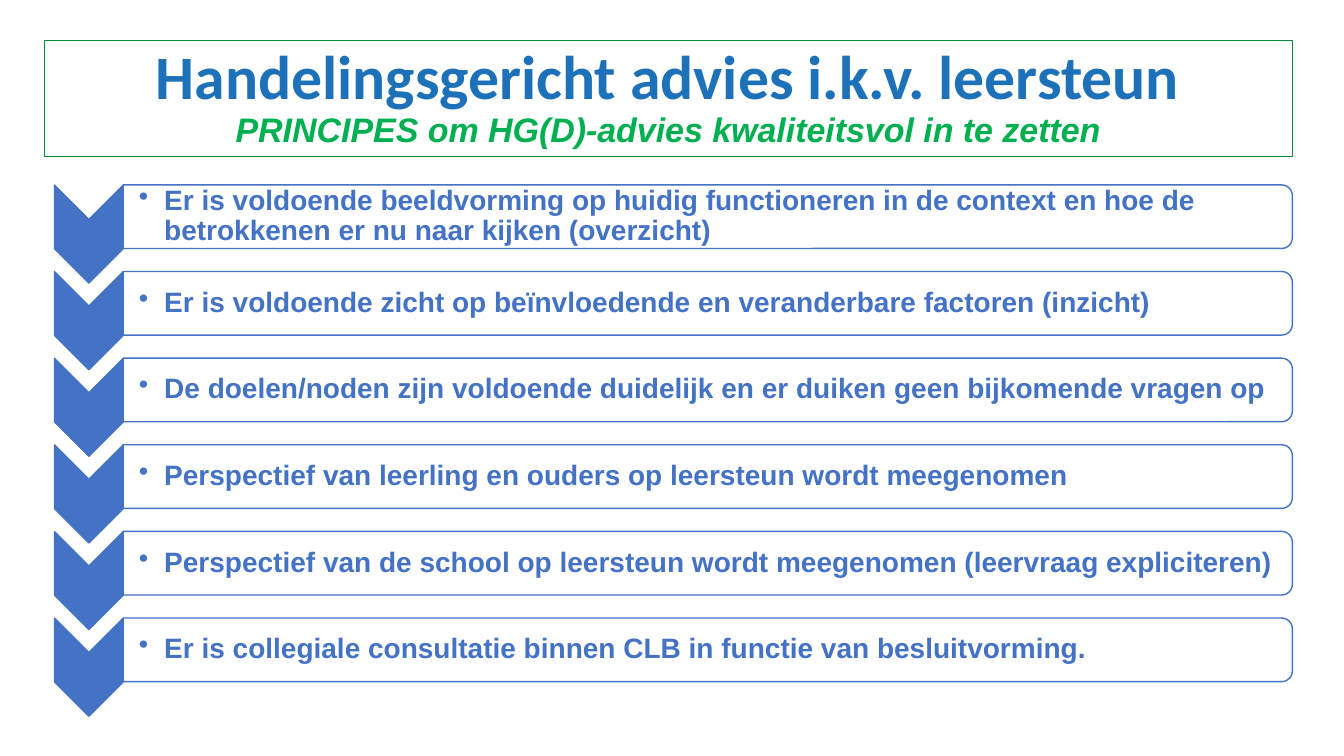
import pptx
import pptx.util
import pptx.dml.color
import pptx.enum.shapes
import pptx.enum.text
import lxml.etree
from pptx.oxml.ns import qn

Pt = pptx.util.Pt
SHAPES = pptx.enum.shapes.MSO_SHAPE
COLORS = {
    "title": "1D71B8",
    "subtitle": "00B050",
    "frame": "008D36",
    "principle": "4472C4",
    "bar": "FFFFFF",
}
PRINCIPLES = [
    "Er is voldoende beeldvorming op huidig functioneren in de context en hoe de betrokkenen er nu naar kijken (overzicht)",
    "Er is voldoende zicht op beïnvloedende en veranderbare factoren (inzicht)",
    "De doelen/noden zijn voldoende duidelijk en er duiken geen bijkomende vragen op",
    "Perspectief van leerling en ouders op leersteun wordt meegenomen",
    "Perspectief van de school op leersteun wordt meegenomen (leervraag expliciteren)",
    "Er is collegiale consultatie binnen CLB in functie van besluitvorming.",
]
ROW_PITCH = 61.88


def add_text(paragraph, text, size, color, font="Arial", italic=False):
    run = paragraph.add_run()
    run.text = text
    run.font.name = font
    run.font.size = Pt(size)
    run.font.bold = True
    run.font.italic = italic
    run.font.color.rgb = pptx.dml.color.RGBColor.from_string(COLORS[color])


def add_turned_shape(slide, kind, center_x, center_y, width, height, fill):
    shape = slide.shapes.add_shape(
        kind, Pt(center_x - width / 2), Pt(center_y - height / 2), Pt(width), Pt(height))
    shape.rotation = 90
    shape.shadow.inherit = False
    shape.fill.solid()
    shape.fill.fore_color.rgb = pptx.dml.color.RGBColor.from_string(COLORS[fill])
    shape.line.color.rgb = pptx.dml.color.RGBColor.from_string(COLORS["principle"])
    shape.line.width = Pt(1)
    return shape


presentation = pptx.Presentation()
presentation.slide_width = Pt(960)
presentation.slide_height = Pt(540)
slide = presentation.slides.add_slide(presentation.slide_layouts[5])

title = slide.shapes.title
title.left, title.top, title.width, title.height = Pt(31.7), Pt(28.8), Pt(891.4), Pt(82.8)
title.line.color.rgb = pptx.dml.color.RGBColor.from_string(COLORS["frame"])
title.line.width = Pt(0.75)
title.text_frame.auto_size = pptx.enum.text.MSO_AUTO_SIZE.NONE
title.text_frame.vertical_anchor = pptx.enum.text.MSO_ANCHOR.MIDDLE
heading = title.text_frame.paragraphs[0]
heading.alignment = pptx.enum.text.PP_ALIGN.CENTER
heading.line_spacing = 0.9
add_text(heading, "Handelingsgericht advies i.k.v. leersteun", size=44.1, color="title", font="Calibri")
heading.add_line_break()
add_text(heading, "PRINCIPES om HG(D)-advies kwaliteitsvol in te zetten", size=24.3, color="subtitle", italic=True)

for row, principle in enumerate(PRINCIPLES):
    offset = row * ROW_PITCH
    add_turned_shape(slide, SHAPES.CHEVRON, 63.5, 167.2 + offset, 70, 49, "principle")
    bar = add_turned_shape(
        slide, SHAPES.ROUND_2_SAME_RECTANGLE, 505.5, 154.8 + offset, 45.4, 835.2, "bar")
    bar_color = bar.fill._xPr.find(qn("a:solidFill"))[0]
    lxml.etree.SubElement(bar_color, qn("a:alpha"), val="90000")

    box = slide.shapes.add_textbox(Pt(87.8), Pt(134.2 + offset), Pt(833), Pt(41))
    frame = box.text_frame
    frame.word_wrap = True
    frame.vertical_anchor = pptx.enum.text.MSO_ANCHOR.MIDDLE
    frame.margin_left = Pt(11.5)
    frame.margin_top = frame.margin_right = frame.margin_bottom = Pt(0.9)
    paragraph = frame.paragraphs[0]
    paragraph.line_spacing = 0.9
    properties = paragraph._p.get_or_add_pPr()
    properties.set("marL", str(Pt(18)))
    properties.set("indent", str(Pt(-18)))
    lxml.etree.SubElement(properties, qn("a:buChar"), char="•")
    add_text(paragraph, principle, size=20, color="principle")

presentation.save("out.pptx")
